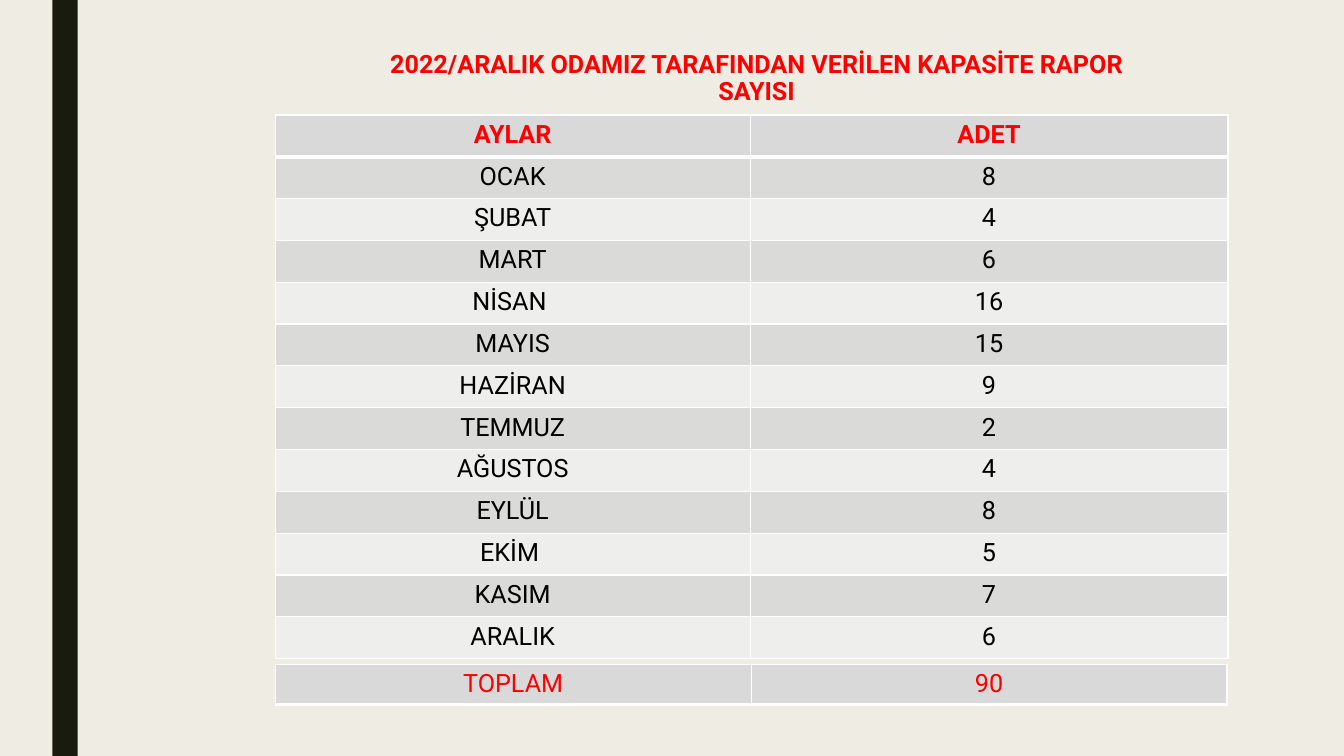
import pptx
import pptx.dml.color
import pptx.enum.shapes
import pptx.enum.text
import pptx.oxml.ns
import pptx.util
import lxml.etree

RGBColor = pptx.dml.color.RGBColor
Inches = pptx.util.Inches

CREAM = RGBColor(0xEF, 0xED, 0xE3)
DARK_OLIVE = RGBColor(0x19, 0x1B, 0x0E)
RED = RGBColor(0xFF, 0x00, 0x00)
BLACK = RGBColor(0x00, 0x00, 0x00)
WHITE = RGBColor(0xFF, 0xFF, 0xFF)
HEADER_GREY = RGBColor(0xD9, 0xD9, 0xD9)
BANDS = (RGBColor(0xDA, 0xDB, 0xD9), RGBColor(0xEE, 0xEE, 0xED))

SLIDE_WIDTH, SLIDE_HEIGHT = 13.33, 7.5
TABLE_LEFT = 2.73
MONTH_COLUMNS = (4.71, 4.74)
TOTAL_COLUMNS = (4.72, 4.72)
MONTH_ROW, TOTAL_ROW = 0.415, 0.4

HEADER = ("AYLAR", "ADET")
MONTHS = [
    ("OCAK", 8), ("ŞUBAT", 4), ("MART", 6), ("NİSAN ", 16),
    ("MAYIS", 15), ("HAZİRAN", 9), ("TEMMUZ", 2), ("AĞUSTOS", 4),
    ("EYLÜL", 8), ("EKİM ", 5), ("KASIM", 7), ("ARALIK", 6),
]
TOTAL = ("TOPLAM", sum(count for month, count in MONTHS))


def write(frame, text, color=BLACK, bold=False, spacing=1.0):
    paragraph = frame.paragraphs[0]
    paragraph.alignment = pptx.enum.text.PP_ALIGN.CENTER
    paragraph.line_spacing = spacing
    run = paragraph.add_run()
    run.text = text
    run.font.name = "Roboto"
    run.font.size = pptx.util.Pt(18)
    run.font.bold = bold
    run.font.color.rgb = color


def add_border(cell, bottom):
    properties = cell._tc.get_or_add_tcPr()
    qn = pptx.oxml.ns.qn
    for side, points in (("L", 1), ("R", 1), ("T", 1), ("B", bottom)):
        line = lxml.etree.SubElement(
            properties, qn(f"a:ln{side}"), w=str(pptx.util.Pt(points)))
        fill = lxml.etree.SubElement(line, qn("a:solidFill"))
        lxml.etree.SubElement(fill, qn("a:srgbClr"), val=str(WHITE))


def fill_row(table, index, values, fill, bottom=1, **text_format):
    for column, value in enumerate(values):
        cell = table.cell(index, column)
        add_border(cell, bottom)
        cell.fill.solid()
        cell.fill.fore_color.rgb = fill
        write(cell.text_frame, str(value), **text_format)


def add_grid(slide, top, columns, row_count, row_height):
    table = slide.shapes.add_table(
        row_count, len(columns), Inches(TABLE_LEFT), Inches(top),
        Inches(sum(columns)), Inches(row_count * row_height)).table
    for column, width in zip(table.columns, columns):
        column.width = Inches(width)
    for row in table.rows:
        row.height = Inches(row_height)
    return table


def add_side_bar(slide):
    bar = slide.shapes.add_shape(
        pptx.enum.shapes.MSO_SHAPE.RECTANGLE,
        Inches(0.52), 0, Inches(0.25), Inches(SLIDE_HEIGHT))
    bar.shadow.inherit = False
    bar.fill.solid()
    bar.fill.fore_color.rgb = DARK_OLIVE
    bar.line.fill.background()


def set_title(slide, text):
    title = slide.shapes.title
    title.left, title.top = Inches(3.39), Inches(0.47)
    title.width, title.height = Inches(8.23), Inches(0.42)
    frame = title.text_frame
    frame.word_wrap = True
    frame.auto_size = pptx.enum.text.MSO_AUTO_SIZE.NONE
    frame.vertical_anchor = pptx.enum.text.MSO_ANCHOR.TOP
    write(frame, text, color=RED, bold=True, spacing=0.89)


def main():
    deck = pptx.Presentation()
    deck.slide_width = Inches(SLIDE_WIDTH)
    deck.slide_height = Inches(SLIDE_HEIGHT)
    slide = deck.slides.add_slide(deck.slide_layouts.get_by_name("Title Only"))
    slide.background.fill.solid()
    slide.background.fill.fore_color.rgb = CREAM

    add_side_bar(slide)
    set_title(slide, "2022/ARALIK ODAMIZ TARAFINDAN VERİLEN KAPASİTE RAPOR SAYISI")

    months = add_grid(slide, 1.14, MONTH_COLUMNS, len(MONTHS) + 1, MONTH_ROW)
    fill_row(months, 0, HEADER, HEADER_GREY, bottom=3, color=RED, bold=True)
    for index, month in enumerate(MONTHS):
        fill_row(months, index + 1, month, BANDS[index % 2])

    total = add_grid(slide, 6.59, TOTAL_COLUMNS, 1, TOTAL_ROW)
    fill_row(total, 0, TOTAL, HEADER_GREY, bottom=3, color=RED)

    deck.save("out.pptx")


if __name__ == "__main__":
    main()
